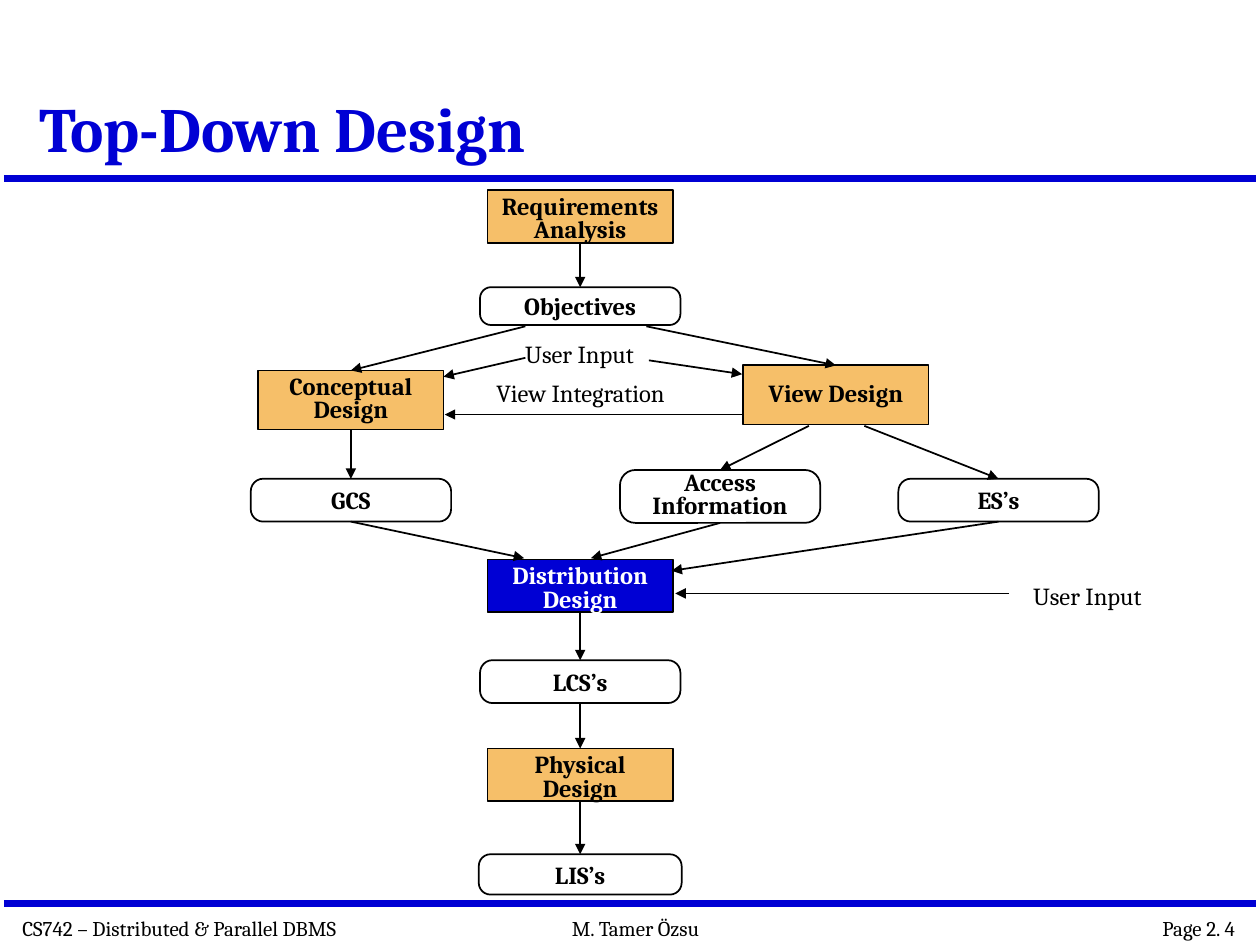
import pptx
import pptx.util
import pptx.dml.color
import pptx.enum.shapes
import pptx.enum.text
import pptx.oxml
import pptx.oxml.ns

Inches = pptx.util.Inches
Pt = pptx.util.Pt
RGBColor = pptx.dml.color.RGBColor
SHAPE = pptx.enum.shapes.MSO_SHAPE
ALIGN = pptx.enum.text.PP_ALIGN
ANCHOR = pptx.enum.text.MSO_ANCHOR

BLUE = RGBColor(0x00, 0x00, 0xD4)
ORANGE = RGBColor(0xF6, 0xBF, 0x69)
BLACK = RGBColor(0x00, 0x00, 0x00)
WHITE = RGBColor(0xFF, 0xFF, 0xFF)
FONT = "Cambria"
TOP, LEFT, BOTTOM, RIGHT = range(4)


def write_text(shape, text, size=14, color=BLACK, bold=False, align=ALIGN.LEFT,
               anchor=ANCHOR.TOP, spacing=None, wrap=False, inset=0.05):
    """Fill a shape with text, one paragraph per line."""
    frame = shape.text_frame
    frame.text = text
    frame.word_wrap = wrap
    frame.vertical_anchor = anchor
    frame.margin_left = frame.margin_right = Inches(0.1)
    frame.margin_top = frame.margin_bottom = Inches(inset)
    for paragraph in frame.paragraphs:
        paragraph.alignment = align
        if spacing:
            paragraph.line_spacing = spacing
        font = paragraph.runs[0].font
        font.name, font.size, font.bold = FONT, Pt(size), bold
        font.color.rgb = color


def add_label(slide, text, left, top, width, height, **text_format):
    box = slide.shapes.add_textbox(Inches(left), Inches(top), Inches(width), Inches(height))
    write_text(box, text, **text_format)
    box.text_frame.auto_size = pptx.enum.text.MSO_AUTO_SIZE.SHAPE_TO_FIT_TEXT


def add_box(slide, kind, text, left, top, width, height, fill=None, **text_format):
    shape = slide.shapes.add_shape(kind, Inches(left), Inches(top),
                                   Inches(width), Inches(height))
    shape.shadow.inherit = False
    if fill is None:
        shape.fill.background()
    else:
        shape.fill.solid()
        shape.fill.fore_color.rgb = fill
    shape.line.color.rgb = BLACK
    shape.line.width = Pt(1)
    write_text(shape, text, bold=True, align=ALIGN.CENTER, **text_format)
    return shape


def add_activity(slide, text, left, top, height=0.42, fill=ORANGE, **text_format):
    """A rectangle for a design step."""
    return add_box(slide, SHAPE.RECTANGLE, text, left, top, 1.47, height,
                   fill=fill, spacing=0.8, **text_format)


def add_product(slide, text, left, top, width=1.59, height=0.34, **text_format):
    """A rounded rectangle for the outcome of a step."""
    shape = add_box(slide, SHAPE.ROUNDED_RECTANGLE, text, left, top, width, height,
                    anchor=ANCHOR.MIDDLE, **text_format)
    shape.adjustments[0] = 0.29
    return shape


def add_line(slide, start, end, color=BLACK, width=1, arrow=False):
    """Each end is an (x, y) point or a (shape, connection site) pair."""
    start_joined, end_joined = (not isinstance(place[0], (int, float))
                                for place in (start, end))
    x1, y1 = (0, 0) if start_joined else start
    x2, y2 = (0, 0) if end_joined else end
    line = slide.shapes.add_connector(pptx.enum.shapes.MSO_CONNECTOR.STRAIGHT,
                                      Inches(x1), Inches(y1), Inches(x2), Inches(y2))
    if start_joined:
        line.begin_connect(*start)
    if end_joined:
        line.end_connect(*end)
    line.line.color.rgb = color
    line.line.width = Pt(width)
    if arrow:
        tail = pptx.oxml.parse_xml(
            f'<a:tailEnd {pptx.oxml.ns.nsdecls("a")} type="triangle"/>')
        line.line._get_or_add_ln().append(tail)
    line._element.spPr.append(
        pptx.oxml.parse_xml(f'<a:effectLst {pptx.oxml.ns.nsdecls("a")}/>'))


def add_frame(slide):
    """Title, rules and footer."""
    title = slide.shapes.title
    title.left, title.top = Inches(0.21), Inches(0.12)
    title.width, title.height = Inches(7.83), Inches(1.25)
    write_text(title, "Top-Down Design", size=36, color=BLUE, bold=True,
               anchor=ANCHOR.BOTTOM, spacing=0.9, wrap=True)
    for y in (1.42, 7.17):
        add_line(slide, (0.03, y), (9.97, y), color=BLUE, width=4)
    for text, left, width, align in (
            ("CS742 – Distributed & Parallel DBMS", 0.08, 3.2, ALIGN.LEFT),
            ("M. Tamer Özsu", 4.44, 1.39, ALIGN.LEFT),
            ("Page 2. 4", 8.9, 1, ALIGN.RIGHT)):
        add_label(slide, text, left, 7.22, width, 0.3, size=12, align=align)


def add_flow(slide):
    # Design steps
    requirements = add_activity(slide, "Requirements\nAnalysis", 3.87, 1.51)
    conceptual = add_activity(slide, "Conceptual\nDesign", 2.05, 2.94, height=0.47)
    view = add_activity(slide, "View Design", 5.9, 2.9, height=0.47, anchor=ANCHOR.MIDDLE)
    distribution = add_activity(slide, "Distribution\nDesign", 3.87, 4.44,
                                fill=BLUE, color=WHITE)
    physical = add_activity(slide, "Physical\nDesign", 3.87, 5.94)

    # Outcomes
    objectives = add_product(slide, "Objectives", 3.81, 2.28, height=0.3)
    gcs = add_product(slide, "GCS", 1.99, 3.8)
    access = add_product(slide, "Access\nInformation", 4.92, 3.73, height=0.42,
                         spacing=0.75, inset=0)
    es = add_product(slide, "ES’s", 7.13, 3.8)
    lcs = add_product(slide, "LCS’s", 3.81, 5.24)
    lis = add_product(slide, "LIS’s", 3.8, 6.78, width=1.61, height=0.32)

    # Free labels
    add_label(slide, "User Input", 4.07, 2.64, 1.19, 0.33)
    add_label(slide, "View Integration", 3.84, 2.95, 1.72, 0.33)
    add_label(slide, "User Input", 8.1, 4.56, 1.19, 0.33)

    # Arrows straight down from one box to the next
    for upper, lower in ((requirements, objectives), (conceptual, gcs),
                         (distribution, lcs), (lcs, physical), (physical, lis)):
        add_line(slide, (upper, BOTTOM), (lower, TOP), arrow=True)

    # Branches and inputs
    for start, end in (
            ((4.17, 2.59), (conceptual, TOP)),
            ((5.13, 2.59), (view, TOP)),
            ((4.17, 2.84), (3.52, 2.99)),
            ((5.15, 2.86), (5.89, 2.97)),
            ((5.89, 3.29), (3.53, 3.29)),
            ((6.42, 3.38), (access, TOP)),
            ((6.86, 3.38), (es, TOP)),
            ((gcs, BOTTOM), (4.16, 4.43)),
            ((access, BOTTOM), (4.69, 4.43)),
            ((es, BOTTOM), (5.33, 4.53)),
            ((8.01, 4.71), (5.36, 4.71))):
        add_line(slide, start, end, arrow=True)


def main():
    presentation = pptx.Presentation()
    presentation.slide_width, presentation.slide_height = Inches(10), Inches(7.5)
    slide = presentation.slides.add_slide(presentation.slide_layouts[5])
    add_frame(slide)
    add_flow(slide)
    presentation.save("out.pptx")


if __name__ == "__main__":
    main()
